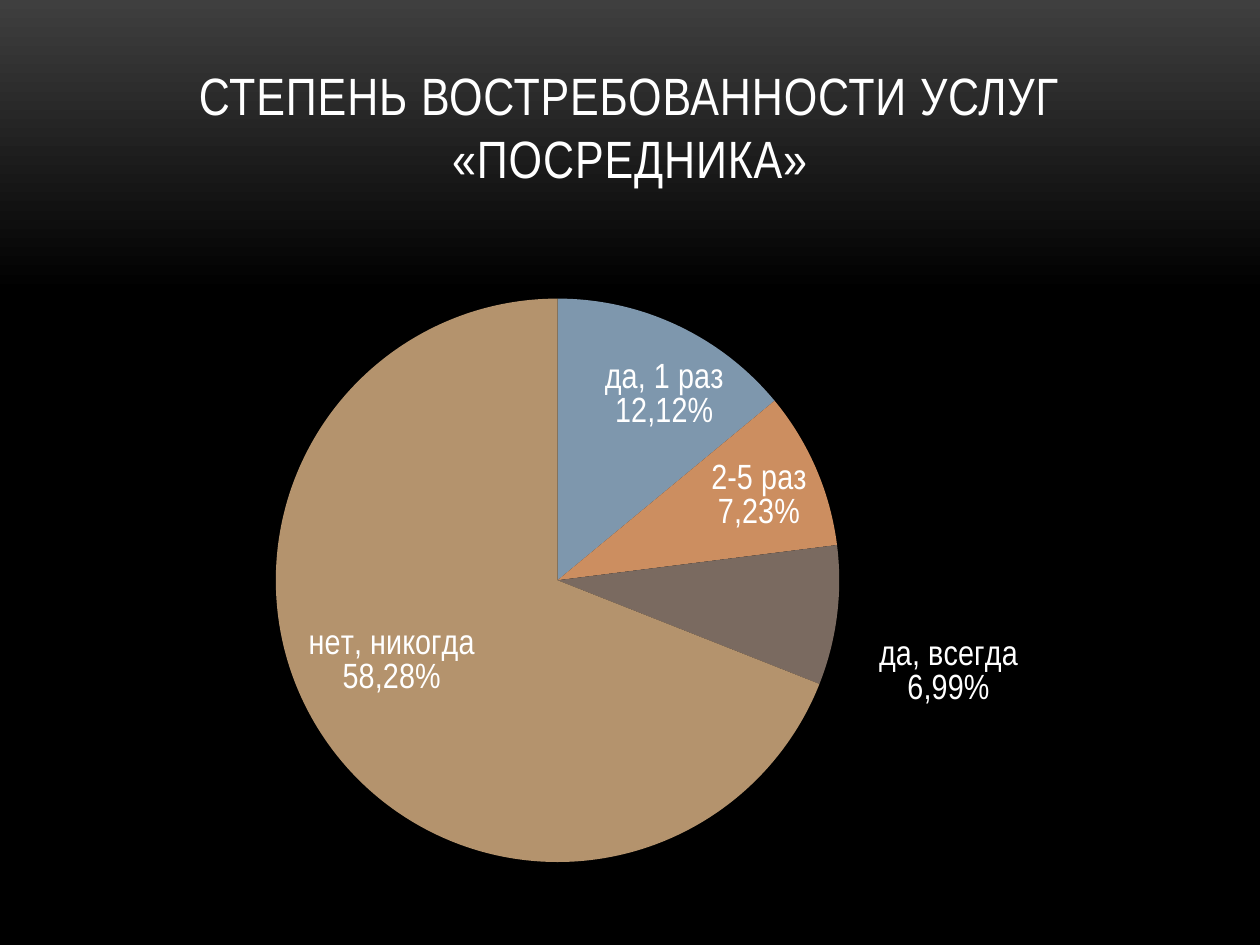
from dataclasses import dataclass

from lxml.etree import SubElement
from pptx import Presentation
from pptx.chart.data import CategoryChartData
from pptx.dml.color import RGBColor
from pptx.enum.chart import XL_CHART_TYPE
from pptx.enum.text import MSO_ANCHOR, PP_ALIGN
from pptx.oxml import parse_xml
from pptx.oxml.ns import nsdecls, qn
from pptx.util import Cm, Pt


@dataclass(frozen=True)
class Theme:
    font: str = "Arial Narrow"
    text: str = "FFFFFF"
    glow: str = "3F3F3F"
    base: str = "000000"
    title_size: int = 30
    label_size: int = 20


@dataclass(frozen=True)
class Answer:
    name: str
    value: int
    share: str
    color: str
    dx: Cm
    dy: Cm


THEME = Theme()
TITLE = "СТЕПЕНЬ ВОСТРЕБОВАННОСТИ УСЛУГ «ПОСРЕДНИКА»"
ANSWERS = [
    Answer("да, 1 раз", 14, "12,12%", "7E97AD", Cm(-1.53), Cm(2.25)),
    Answer("2-5 раз", 9, "7,23%", "CC8E60", Cm(-2.25), Cm(1.33)),
    Answer("да, всегда", 8, "6,99%", "7A6A60", Cm(0.7), Cm(0.46)),
    Answer("нет, никогда", 69, "58,28%", "B4936D", Cm(3.16), Cm(-2.31)),
]
LEFT, WIDTH = Cm(1.69), Cm(22.02)
CHART_TOP, CHART_HEIGHT = Cm(4.45), Cm(13.28)
PIE_LEFT, PIE_TOP, PIE_SIZE = Cm(3.87), Cm(1.57), Cm(11.36)


def rgb(value: str) -> RGBColor:
    return RGBColor.from_string(value)


def set_font(font, size: int) -> None:
    font.name = THEME.font
    font.size = Pt(size)
    font.color.rgb = rgb(THEME.text)


def write(tf, text: str, *, size: int, spacing: int = 0) -> None:
    for i, line in enumerate(text.split("\n")):
        p = tf.paragraphs[0] if i == 0 else tf.add_paragraph()
        p.alignment = PP_ALIGN.CENTER
        r = p.add_run()
        r.text = line
        set_font(r.font, size)
        if spacing:
            r.font._element.set("spc", str(spacing))


def manual_layout(**values):
    layout = parse_xml(f"<c:layout {nsdecls('c')}><c:manualLayout/></c:layout>")
    for tag, value in values.items():
        SubElement(layout[0], qn(f"c:{tag}")).set("val", str(value))
    return layout


def paint_background(s) -> None:
    fill = s.background.fill
    fill.gradient()
    fill.gradient_angle = 270
    top, bottom = fill.gradient_stops
    top.color.rgb = rgb(THEME.glow)
    bottom.color.rgb = rgb(THEME.base)
    top.position, bottom.position = 0, 0.31


def add_title(s) -> None:
    tf = s.shapes.add_textbox(LEFT, Cm(0.76), WIDTH, Cm(3.18)).text_frame
    tf.word_wrap = True
    tf.vertical_anchor = MSO_ANCHOR.BOTTOM
    write(tf, TITLE, size=THEME.title_size, spacing=50)


def add_pie(s, answers: list[Answer]) -> None:
    data = CategoryChartData()
    data.categories = [a.name for a in answers]
    data.add_series("Series 1", [a.value for a in answers])
    chart = s.shapes.add_chart(
        XL_CHART_TYPE.PIE, LEFT, CHART_TOP, WIDTH, CHART_HEIGHT, data
    ).chart
    chart.has_title = False
    chart.has_legend = False
    set_font(chart.font, THEME.label_size)

    plot_area = chart._chartSpace.chart.plotArea
    for old in plot_area.findall(qn("c:layout")):
        plot_area.remove(old)
    plot_area.insert(0, manual_layout(
        layoutTarget="inner", xMode="edge", yMode="edge",
        x=PIE_LEFT / WIDTH, y=PIE_TOP / CHART_HEIGHT,
        w=PIE_SIZE / WIDTH, h=PIE_SIZE / CHART_HEIGHT,
    ))

    plot = chart.plots[0]
    plot.vary_by_categories = True
    plot.has_data_labels = True
    labels = plot.data_labels
    labels.show_value = False
    labels.show_category_name = True
    labels.show_percentage = True
    set_font(labels.font, THEME.label_size)

    for i, a in enumerate(answers):
        point = plot.series[0].points[i]
        point.format.fill.solid()
        point.format.fill.fore_color.rgb = rgb(a.color)
        point.format.line.fill.background()
        write(point.data_label.text_frame, f"{a.name}\n{a.share}", size=THEME.label_size)
    for a, label in zip(answers, plot_area.iter(qn("c:dLbl"))):
        label.insert(1, manual_layout(x=a.dx / WIDTH, y=a.dy / CHART_HEIGHT))


def main() -> None:
    prs = Presentation()
    prs.slide_width, prs.slide_height = Cm(25.4), Cm(19.05)
    s = prs.slides.add_slide(prs.slide_layouts[6])
    paint_background(s)
    add_title(s)
    add_pie(s, ANSWERS)
    prs.save("out.pptx")


if __name__ == "__main__":
    main()
